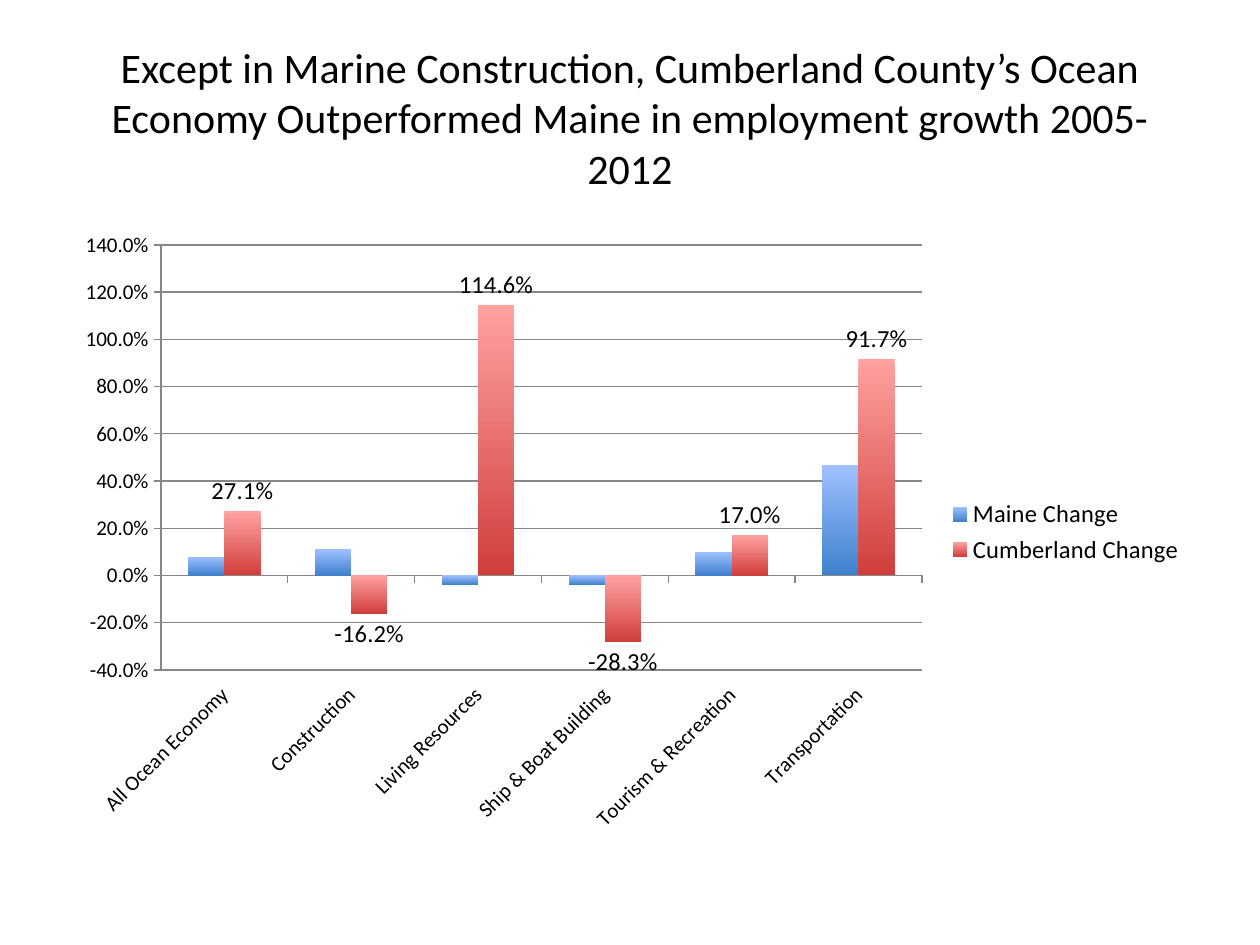
from lxml.etree import SubElement
from pptx import Presentation
from pptx.chart.data import CategoryChartData
from pptx.dml.color import RGBColor
from pptx.enum.chart import (XL_CHART_TYPE, XL_LABEL_POSITION,
                             XL_LEGEND_POSITION, XL_TICK_LABEL_POSITION)
from pptx.enum.text import MSO_ANCHOR, PP_ALIGN
from pptx.oxml.ns import qn
from pptx.util import Pt

PX_PER_INCH = 126
FONT = "Calibri"
COLORS = {
    "text": "000000",
    "grid": "878787",
    "maine_top": "9FC1FF",
    "maine_bottom": "3F80CD",
    "cumberland_top": "FFA2A0",
    "cumberland_bottom": "D03E3B",
}
CATEGORIES = ["All Ocean Economy", "Construction", "Living Resources",
              "Ship & Boat Building", "Tourism & Recreation", "Transportation"]
CHANGES = {
    "Maine Change": (0.08, 0.11, -0.04, -0.04, 0.1, 0.47),
    "Cumberland Change": (0.271, -0.162, 1.146, -0.283, 0.17, 0.917),
}


def px(length):
    return round(length * 914400 / PX_PER_INCH)


def color(name):
    return RGBColor.from_string(COLORS[name])


def style_font(font, size):
    font.name = FONT
    font.size = Pt(size)
    font.bold = False
    font.color.rgb = color("text")


def add_text(slide, box, text, size=18, align=PP_ALIGN.LEFT, anchor=MSO_ANCHOR.TOP):
    frame = slide.shapes.add_textbox(*map(px, box)).text_frame
    frame.word_wrap = True
    frame.vertical_anchor = anchor
    paragraph = frame.paragraphs[0]
    paragraph.alignment = align
    run = paragraph.add_run()
    run.text = text
    style_font(run.font, size)


def place_plot(chart, box, plot_box):
    """Fix the inner plot area at plot_box, px measured from the chart's corner."""
    plot_area = chart._chartSpace.chart.plotArea
    layout = plot_area.find(qn("c:layout"))
    if layout is None:
        layout = SubElement(plot_area, qn("c:layout"))
        plot_area.insert(0, layout)
    manual = SubElement(layout, qn("c:manualLayout"))
    left, top, width, height = plot_box
    settings = {
        "layoutTarget": "inner", "xMode": "edge", "yMode": "edge",
        "x": left / box[2], "y": top / box[3],
        "w": width / box[2], "h": height / box[3],
    }
    for tag, value in settings.items():
        SubElement(manual, qn(f"c:{tag}")).set("val", str(value))


def style_axes(chart):
    sectors, change = chart.category_axis, chart.value_axis
    for axis in (sectors, change):
        style_font(axis.tick_labels.font, 12)
        axis.format.line.color.rgb = color("grid")
    sectors.tick_label_position = XL_TICK_LABEL_POSITION.LOW
    sectors._element.find(qn("c:txPr")).find(qn("a:bodyPr")).set("rot", "-2700000")
    change.minimum_scale, change.maximum_scale, change.major_unit = -0.4, 1.4, 0.2
    change.tick_labels.number_format = "0.0%"
    change.tick_labels.number_format_is_linked = False
    change.major_gridlines.format.line.color.rgb = color("grid")


def style_bars(plot):
    plot.gap_width = 150
    plot.overlap = 0
    plot.vary_by_categories = False
    for series, region in zip(plot.series, ("maine", "cumberland")):
        series.invert_if_negative = False
        fill = series.format.fill
        fill.gradient()
        fill.gradient_angle = 270
        for stop, end in zip(fill.gradient_stops, ("top", "bottom")):
            stop.color.rgb = color(f"{region}_{end}")
    labels = plot.series[1].data_labels
    labels.show_value = True
    labels.number_format = "0.0%"
    labels.number_format_is_linked = False
    labels.position = XL_LABEL_POSITION.OUTSIDE_END
    style_font(labels.font, 14)


def add_growth_chart(slide, box):
    growth = CategoryChartData(number_format="0.0%")
    growth.categories = CATEGORIES
    for name, values in CHANGES.items():
        growth.add_series(name, values)
    chart = slide.shapes.add_chart(
        XL_CHART_TYPE.COLUMN_CLUSTERED, *map(px, box), growth).chart
    style_font(chart.font, 18)
    chart.has_title = False
    chart.has_legend = True
    chart.legend.position = XL_LEGEND_POSITION.RIGHT
    chart.legend.include_in_layout = False
    style_font(chart.legend.font, 14)
    style_axes(chart)
    style_bars(chart.plots[0])
    place_plot(chart, box, (98, 25, 761, 425))


def main():
    presentation = Presentation()
    presentation.slide_width, presentation.slide_height = px(1260), px(945)
    slide = presentation.slides.add_slide(presentation.slide_layouts[6])
    add_text(slide, (63, 38, 1134, 158),
             "Except in Marine Construction, Cumberland County’s Ocean Economy "
             "Outperformed Maine in employment growth 2005-2012",
             size=24, align=PP_ALIGN.CENTER, anchor=MSO_ANCHOR.MIDDLE)
    add_growth_chart(slide, (63, 220, 1134, 624))
    presentation.save("out.pptx")


if __name__ == "__main__":
    main()
